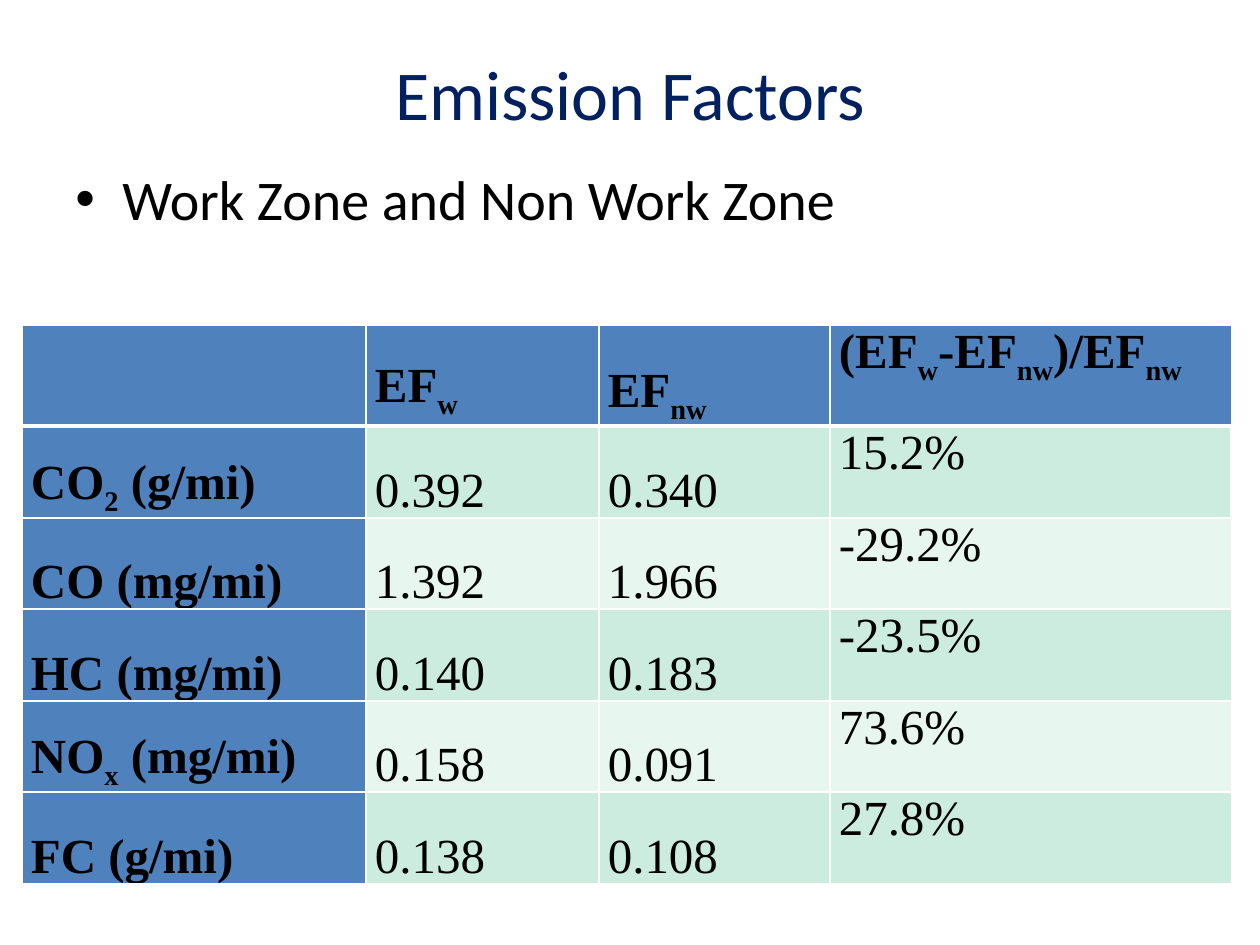
import lxml.etree
import pptx
import pptx.util
from pptx.dml.color import RGBColor
from pptx.enum.text import MSO_ANCHOR, PP_ALIGN
from pptx.oxml.ns import qn

PX = 914400 // 126
NAVY = RGBColor(0x00, 0x20, 0x60)
BLACK = RGBColor(0x00, 0x00, 0x00)
BLUE = RGBColor(0x4F, 0x81, 0xBD)
MINT = RGBColor(0xCB, 0xEC, 0xDE)
PALE = RGBColor(0xE7, 0xF6, 0xEF)

# Every second part between bars is a subscript.
ROWS = [
    ["", "EF|w|| ", "EF|nw", "(EF|w|-EF|nw|)/EF|nw"],
    ["CO|2| (g/mi)", "0.392", "0.340", "15.2%"],
    ["CO (mg/mi)", "1.392", "1.966", "-29.2%"],
    ["HC (mg/mi)", "0.140", "0.183", "-23.5%"],
    ["NO|x| (mg/mi)", "0.158", "0.091", "73.6%"],
    ["FC (g/mi)", "0.138", "0.108", "27.8%"],
]
WIDTHS = [344, 233, 231, 402]
HEIGHTS = [101, 92, 91, 92, 91, 92]


def add_text(slide, box, text, size, color):
    shape = slide.shapes.add_textbox(*[n * PX for n in box])
    shape.text_frame.word_wrap = True
    para = shape.text_frame.paragraphs[0]
    para.text = text
    para.font.name = "Calibri"
    para.font.size = pptx.util.Pt(size)
    para.font.color.rgb = color
    return shape.text_frame, para


def add_edges(cell, thick):
    """Draw white cell borders, 3 pt on the thick sides and 1 pt elsewhere."""
    props = cell._tc.get_or_add_tcPr()
    for i, side in enumerate("LRTB"):
        line = lxml.etree.Element(qn("a:ln" + side))
        line.set("w", str(pptx.util.Pt(3 if side in thick else 1)))
        fill = lxml.etree.SubElement(line, qn("a:solidFill"))
        lxml.etree.SubElement(fill, qn("a:srgbClr")).set("val", "FFFFFF")
        props.insert(i, line)


deck = pptx.Presentation()
deck.slide_width = 1260 * PX
deck.slide_height = 945 * PX
slide = deck.slides.add_slide(deck.slide_layouts[6])

frame, para = add_text(slide, (63, 38, 1134, 110), "Emission Factors", 40, NAVY)
frame.vertical_anchor = MSO_ANCHOR.MIDDLE
para.alignment = PP_ALIGN.CENTER

frame, para = add_text(slide, (63, 158, 1134, 116),
                       "Work Zone and Non Work Zone", 32, BLACK)
props = para._p.get_or_add_pPr()
props.set("marL", str(47 * PX))
props.set("indent", str(-47 * PX))
font = lxml.etree.Element(qn("a:buFont"))
font.set("typeface", "Arial")
mark = lxml.etree.Element(qn("a:buChar"))
mark.set("char", "•")
props.insert(0, font)
props.insert(1, mark)

table = slide.shapes.add_table(
    len(ROWS), len(WIDTHS), 22 * PX, 325 * PX,
    sum(WIDTHS) * PX, sum(HEIGHTS) * PX).table
for col, width in zip(table.columns, WIDTHS):
    col.width = width * PX
for row, height in zip(table.rows, HEIGHTS):
    row.height = height * PX

for r, texts in enumerate(ROWS):
    for c, text in enumerate(texts):
        head = r == 0 or c == 0
        cell = table.cell(r, c)
        cell.margin_left = cell.margin_right = 9 * PX
        cell.margin_top = cell.margin_bottom = 0
        cell.vertical_anchor = MSO_ANCHOR.TOP if c == 3 else MSO_ANCHOR.BOTTOM
        cell.fill.solid()
        cell.fill.fore_color.rgb = BLUE if head else MINT if r % 2 else PALE
        add_edges(cell, {0: "B", 1: "TR" if c == 3 else "T"}.get(r, ""))
        para = cell.text_frame.paragraphs[0]
        for i, part in enumerate(text.split("|")):
            if not part:
                continue
            run = para.add_run()
            run.text = part
            run.font.name = "Times New Roman"
            run.font.size = pptx.util.Pt(36 if part == " " else 28)
            run.font.bold = head
            run.font.color.rgb = BLACK
            if i % 2:
                run.font._element.set("baseline", "-25000")

deck.save("out.pptx")
